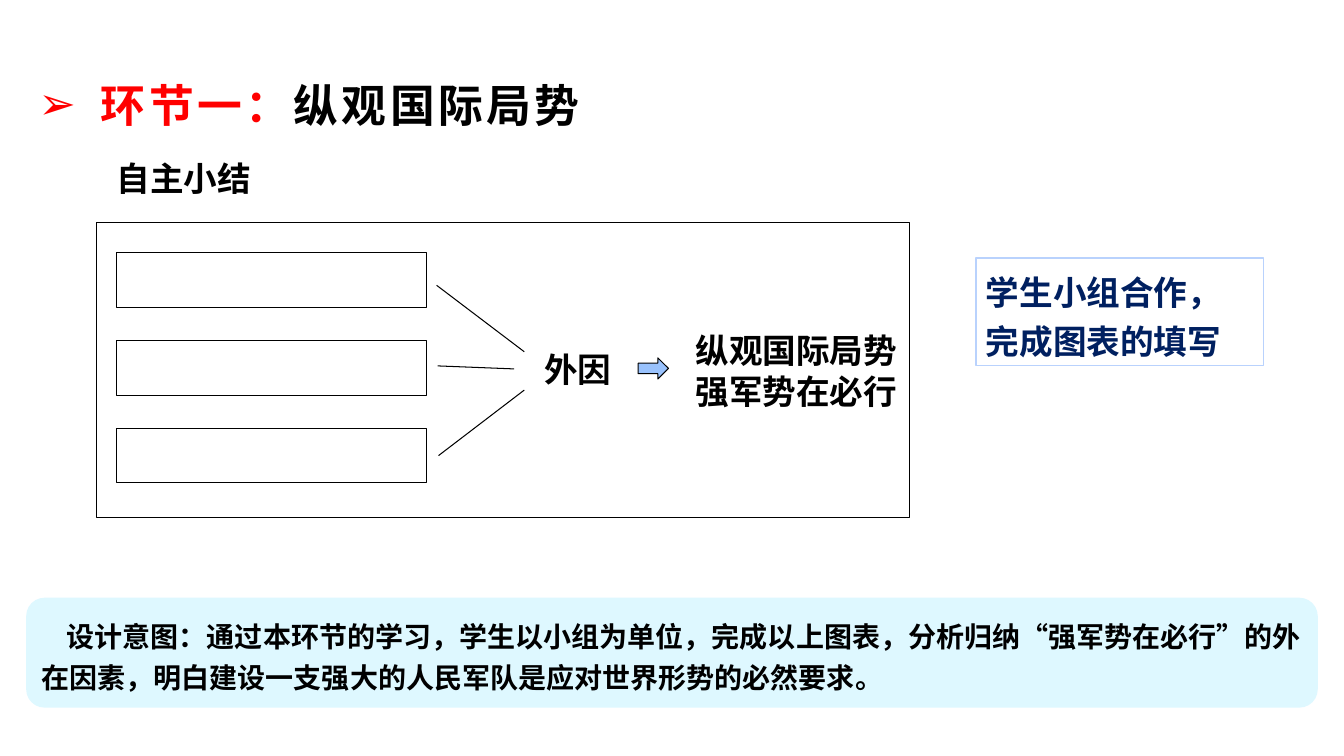
from dataclasses import dataclass
from typing import Optional

from lxml.etree import SubElement
from pptx import Presentation
from pptx.dml.color import RGBColor
from pptx.enum.shapes import MSO_CONNECTOR, MSO_SHAPE
from pptx.enum.text import MSO_ANCHOR, PP_ALIGN
from pptx.oxml.ns import qn
from pptx.util import Inches, Pt

COLORS = {
    "black": "000000",
    "red": "FF0000",
    "navy": "002060",
    "arrow": "99C2FD",
    "task_border": "B9D2FD",
    "purpose": "DEF8FF",
}
CJK_FONT = "Noto Sans CJK SC"
LINE_WIDTH = Pt(0.75)


@dataclass
class Panel:
    left: float
    top: float
    width: float
    height: float
    preset: MSO_SHAPE = MSO_SHAPE.RECTANGLE
    fill: Optional[str] = None
    line: Optional[str] = "black"


@dataclass
class Caption:
    text: str
    size: float = 24
    color: str = "black"
    font: str = CJK_FONT
    line_spacing: Optional[float] = None
    first_indent: float = 0


@dataclass
class Branch:
    start: tuple[float, float]
    end: tuple[float, float]


def rgb(color: str) -> RGBColor:
    return RGBColor.from_string(COLORS[color])


def style_run(run, size: float, color: str, font: str = CJK_FONT) -> None:
    run.font.size = Pt(size)
    run.font.bold = True
    run.font.name = font
    run.font.color.rgb = rgb(color)
    SubElement(run.font._element, qn("a:ea")).set("typeface", CJK_FONT)


def write_caption(frame, caption: Caption) -> None:
    frame.word_wrap = True
    frame.vertical_anchor = MSO_ANCHOR.MIDDLE
    frame.text = caption.text
    for paragraph in frame.paragraphs:
        paragraph.alignment = PP_ALIGN.LEFT
        if caption.line_spacing:
            paragraph.line_spacing = Pt(caption.line_spacing)
        if caption.first_indent:
            paragraph._p.get_or_add_pPr().set("indent", str(Inches(caption.first_indent)))
        for run in paragraph.runs:
            style_run(run, caption.size, caption.color, caption.font)


def draw_panel(slide, panel: Panel, caption: Optional[Caption] = None) -> None:
    shape = slide.shapes.add_shape(
        panel.preset, Inches(panel.left), Inches(panel.top), Inches(panel.width), Inches(panel.height)
    )
    shape.shadow.inherit = False
    if panel.fill:
        shape.fill.solid()
        shape.fill.fore_color.rgb = rgb(panel.fill)
    else:
        shape.fill.background()
    if panel.line:
        shape.line.color.rgb = rgb(panel.line)
        shape.line.width = LINE_WIDTH
    else:
        shape.line.fill.background()
    if caption:
        write_caption(shape.text_frame, caption)


def draw_label(slide, left: float, top: float, width: float, height: float, caption: Caption) -> None:
    label = slide.shapes.add_textbox(Inches(left), Inches(top), Inches(width), Inches(height))
    write_caption(label.text_frame, caption)


def draw_branch(slide, branch: Branch) -> None:
    connector = slide.shapes.add_connector(
        MSO_CONNECTOR.STRAIGHT, *(Inches(value) for value in branch.start + branch.end)
    )
    connector.line.color.rgb = rgb("black")
    connector.line.width = LINE_WIDTH
    SubElement(connector._element.spPr, qn("a:effectLst"))


def write_heading(slide) -> None:
    heading = slide.shapes.title
    heading.left, heading.top = Inches(0.31), Inches(0.7)
    heading.width, heading.height = Inches(12), Inches(0.67)
    frame = heading.text_frame
    frame.margin_left = frame.margin_right = Inches(0.07)
    frame.margin_top = frame.margin_bottom = Inches(0.03)
    frame.vertical_anchor = MSO_ANCHOR.MIDDLE
    paragraph = frame.paragraphs[0]
    paragraph.alignment = PP_ALIGN.LEFT
    properties = paragraph._p.get_or_add_pPr()
    properties.set("marL", str(Inches(0.62)))
    properties.set("indent", str(Inches(-0.62)))
    SubElement(properties, qn("a:buFont")).set("typeface", "Arial")
    SubElement(properties, qn("a:buChar")).set("char", "➢")
    for text, color in (("环节一：", "red"), ("纵观国际局势", "black")):
        run = paragraph.add_run()
        run.text = text
        style_run(run, 32, color)
        run.font._element.set("spc", "240")


PURPOSE = Caption(
    "设计意图：通过本环节的学习，学生以小组为单位，完成以上图表，分析归纳“强军势在必行”的外在因素，"
    "明白建设一支强大的人民军队是应对世界形势的必然要求。",
    size=20,
    line_spacing=29.3,
    first_indent=0.25,
)
TASK = Caption("学生小组合作，完成图表的填写", color="navy", line_spacing=35)
CONCLUSION = Caption("纵观国际局势\n强军势在必行", line_spacing=29.3)
BRANCHES = [
    Branch((4.33, 2.83), (5.2, 3.49)),
    Branch((4.34, 3.63), (5.1, 3.66)),
    Branch((4.35, 4.52), (5.2, 3.87)),
]


def main() -> None:
    presentation = Presentation()
    presentation.slide_width = Inches(13.33)
    presentation.slide_height = Inches(7.5)
    slide = presentation.slides.add_slide(presentation.slide_layouts[5])

    write_heading(slide)
    draw_panel(slide, Panel(0.26, 5.93, 12.81, 1.09, MSO_SHAPE.ROUNDED_RECTANGLE, "purpose", None), PURPOSE)
    draw_panel(slide, Panel(0.96, 2.21, 8.06, 2.92))
    for row in range(3):
        draw_panel(slide, Panel(1.16, 2.51 + row * 0.87, 3.07, 0.54))
    for branch in BRANCHES:
        draw_branch(slide, branch)
    draw_label(slide, 5.3, 3.4, 0.92, 0.52, Caption("外因"))
    draw_panel(slide, Panel(6.33, 3.55, 0.3, 0.21, MSO_SHAPE.RIGHT_ARROW, "arrow"))
    draw_label(slide, 6.8, 3.22, 2.58, 0.9, CONCLUSION)
    draw_panel(slide, Panel(9.68, 2.56, 2.85, 1.07, line="task_border"), TASK)
    draw_label(slide, 1.06, 1.52, 2.48, 0.5, Caption("自主小结", font="Arial"))

    presentation.save("out.pptx")


if __name__ == "__main__":
    main()
